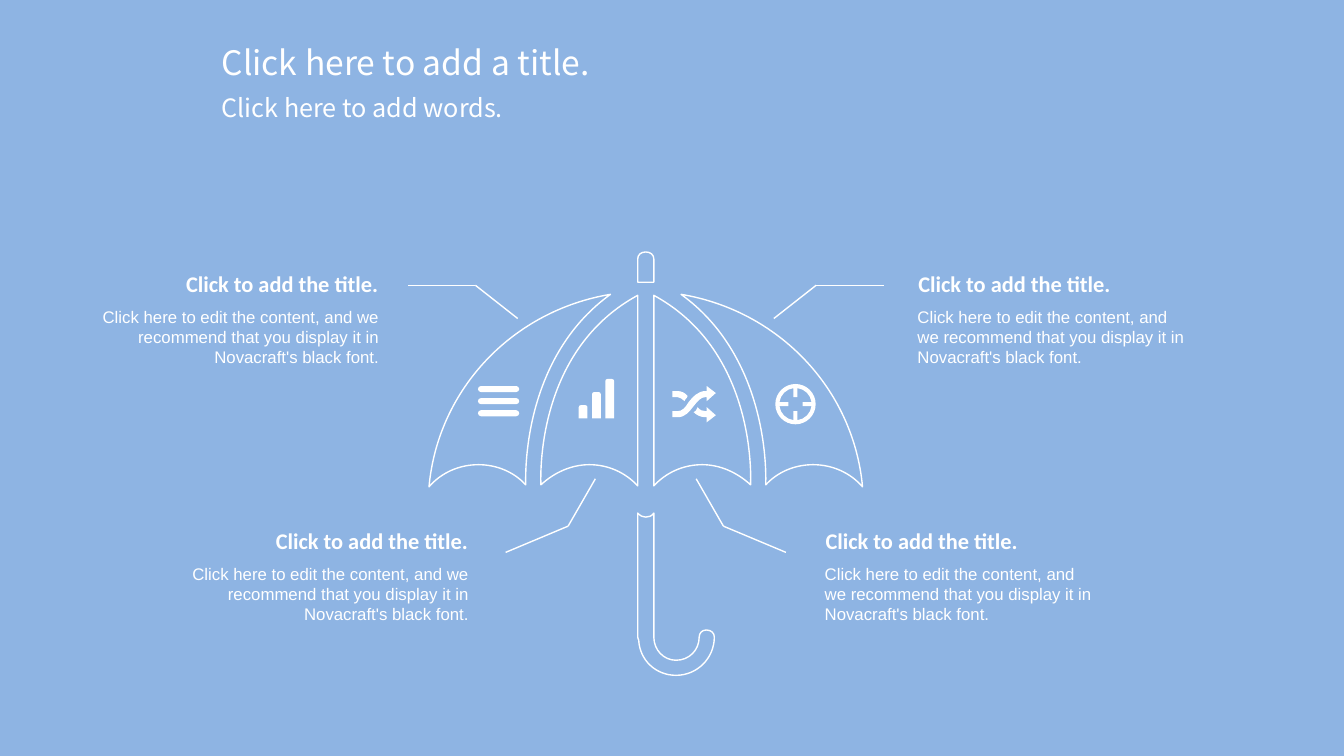
from dataclasses import dataclass
from math import asin, ceil, cos, pi, sin, tan

from lxml.etree import SubElement
from pptx import Presentation
from pptx.dml.color import RGBColor
from pptx.enum.shapes import MSO_CONNECTOR as Connector
from pptx.enum.text import MSO_ANCHOR as Anchor, MSO_AUTO_SIZE as AutoSize, PP_ALIGN as Align
from pptx.oxml.ns import qn
from pptx.util import Inches, Pt

CELL = Inches(7.5) / 75  # grid of 75 rows; every length below counts cells


@dataclass(frozen=True)
class Theme:
    sky: RGBColor = RGBColor(0x8E, 0xB4, 0xE3)
    white: RGBColor = RGBColor(0xFF, 0xFF, 0xFF)
    line: float = 1
    heading: tuple = ("Noto Sans CJK SC", 24, False)
    subheading: tuple = ("Noto Sans CJK SC", 18, False)
    caption: tuple = ("Calibri", 16, True)
    body: tuple = ("Arial", 12, False)


@dataclass(frozen=True)
class Box:
    left: float
    top: float
    width: float
    height: float


THEME = Theme()
CAPTION = "Click to add the title."
BODY = ("Click here to edit the content, and we recommend that you "
        "display it in Novacraft's black font.")

# Umbrella outlines, measured from the axis and the tip.
# Two numbers are a line's end, six are a Bezier curve's controls and end.
OUTER_PANEL = [
    (16.6, 21.1), (14.8, 21.1, 13.1, 21.8, 11.9, 23.1), (12, 20, 11.4, 9.9, 3.5, 4.2),
    (13.1, 5.8, 20.6, 13.5, 21.5, 23.3), (20.3, 21.9, 18.5, 21.1, 16.6, 21.1)]
INNER_PANEL = [
    (5.6, 21.1), (3.7, 21.1, 2, 21.9, 0.8, 23.2), (0.8, 4.3),
    (10, 9.3, 10.5, 20.1, 10.4, 23.1), (9.1, 21.9, 7.4, 21.1, 5.6, 21.1)]
HANDLE = [
    (0, 26.3), (-0.3, 26.3, -0.5, 26.2, -0.8, 25.9), (-0.8, 38.2),
    (-0.8, 38.3, -0.7, 38.5, -0.7, 38.5), (-0.6, 40.5, 1, 42, 3, 42),
    (5.1, 42, 6.8, 40.3, 6.8, 38.2), (6.8, 37.8, 6.5, 37.5, 6, 37.5),
    (5.6, 37.5, 5.3, 37.8, 5.3, 38.2), (5.3, 39.5, 4.3, 40.5, 3, 40.5),
    (1.8, 40.5, 0.8, 39.5, 0.8, 38.2), (0.8, 25.9), (0.6, 26.2, 0.3, 26.3, 0, 26.3)]
TIP = [(0.8, 3), (0.8, 0.7), (0.8, 0.3, 0.5, 0, 0, 0),
       (-0.5, 0, -0.8, 0.3, -0.8, 0.7), (-0.8, 3)]
UPPER_LEADER = [(12.7, 6.6), (16.9, 3.3), (23.6, 3.3)]
LOWER_LEADER = [(5, 22.5), (7.7, 27.2), (13.9, 29.8)]

SHUFFLE = [
    [(3.4, 2.5), (3.3, 2.5), (3, 2.5, 2.7, 2.4, 2.5, 2.1), (2.4, 2.4, 2.3, 2.5, 2.1, 2.6),
     (2.4, 2.9, 2.8, 3.1, 3.3, 3.1), (3.4, 3.1), (3.4, 3.6), (4.3, 2.9), (3.4, 2.1)],
    [(1.2, 1.5), (1.2, 1.4, 1.2, 1.4, 1.3, 1.3), (1.4, 1.2, 1.5, 1.1, 1.5, 1),
     (1.3, 0.7, 0.9, 0.5, 0.5, 0.5), (0, 0.5), (0, 1.1), (0.5, 1.1),
     (0.7, 1.1, 1, 1.3, 1.2, 1.5)],
    [(3.3, 1.1), (3.4, 1.1), (3.4, 1.5), (4.3, 0.7), (3.4, 0), (3.4, 0.5), (3.3, 0.5),
     (2.5, 0.5, 2, 1.1, 1.6, 1.6), (1.3, 2.1, 1, 2.5, 0.5, 2.5), (0, 2.5), (0, 3.1),
     (0.5, 3.1), (1.3, 3.1, 1.7, 2.5, 2.1, 2), (2.5, 1.5, 2.8, 1.1, 3.3, 1.1)]]


def arc(cx, cy, radius, start, end):
    """Return a start point and one curve for each quarter turn or less."""
    pieces = ceil((end - start) / (pi / 2) - 0.01)
    step = (end - start) / pieces
    reach = 4 / 3 * tan(step / 4)
    outline = [(cx + radius * cos(start), cy + radius * sin(start))]
    for piece in range(pieces):
        a, b = start + piece * step, start + (piece + 1) * step
        outline.append((cx + radius * (cos(a) - reach * sin(a)),
                        cy + radius * (sin(a) + reach * cos(a)),
                        cx + radius * (cos(b) + reach * sin(b)),
                        cy + radius * (sin(b) - reach * cos(b)),
                        cx + radius * cos(b), cy + radius * sin(b)))
    return outline


def draw_outlines(page, left, top, outlines, flip=1, filled=False):
    builder = None
    for outline in outlines:
        points = [((left + flip * x) * CELL, (top + y) * CELL)
                  for segment in outline for x, y in zip(segment[::2], segment[1::2])]
        if builder is None:
            builder = page.shapes.build_freeform(*points[0], scale=1.0)
        else:
            builder.move_to(*points[0])
        builder.add_line_segments(points[1:], close=True)
    shape = builder.convert_to_shape()

    # Join each curve's three points into one Bezier segment
    lines = iter(list(shape._element.iter(qn("a:lnTo"))))
    for outline in outlines:
        for segment in outline[1:]:
            first = next(lines)
            if len(segment) == 6:
                first.tag = qn("a:cubicBezTo")
                for _ in range(2):
                    extra = next(lines)
                    first.append(extra[0])
                    extra.getparent().remove(extra)

    shape.shadow.inherit = False
    if filled:
        shape.fill.solid()
        shape.fill.fore_color.rgb = THEME.white
        shape.line.fill.background()
    else:
        shape.fill.background()
        shape.line.color.rgb = THEME.white
        shape.line.width = Pt(THEME.line)


def add_text(page, box, text, style, align=Align.LEFT, inset=None, grow=True):
    area = page.shapes.add_textbox(*(round(v * CELL) for v in
                                     (box.left, box.top, box.width, box.height)))
    frame = area.text_frame
    frame.word_wrap = True
    if grow:
        frame.auto_size = AutoSize.SHAPE_TO_FIT_TEXT
    else:
        frame.vertical_anchor = Anchor.MIDDLE
    if inset is not None:
        frame.margin_left = frame.margin_right = inset
        frame.margin_top = frame.margin_bottom = inset
    para = frame.paragraphs[0]
    para.alignment = align
    span = para.add_run()
    span.text = text
    span.font.name, size, span.font.bold = style
    span.font.size = Pt(size)
    span.font.color.rgb = THEME.white


def add_leader(page, axis, top, points, flip):
    group = page.shapes.add_group_shape()
    corners = [(round((axis + flip * x) * CELL), round((top + y) * CELL)) for x, y in points]
    for start, end in zip(corners, corners[1:]):
        line = group.shapes.add_connector(Connector.STRAIGHT, *start, *end)
        line.line.color.rgb = THEME.white
        line.line.width = Pt(THEME.line)
        SubElement(line._element.spPr, qn("a:effectLst"))


def add_header(page, box):
    add_text(page, Box(box.left, box.top, box.width, 5),
             "Click here to add a title.", THEME.heading, Align.JUSTIFY)
    add_text(page, Box(box.left, box.top + 5, box.width, 4),
             "Click here to add words.", THEME.subheading)


def add_umbrella(page, box):
    axis = box.left + box.width / 2
    for leader in (UPPER_LEADER, LOWER_LEADER):
        for flip in (1, -1):
            add_leader(page, axis, box.top, leader, flip)
    for panel in (OUTER_PANEL, INNER_PANEL):
        for flip in (-1, 1):
            draw_outlines(page, axis, box.top, [panel], flip)
    for part in (HANDLE, TIP):
        draw_outlines(page, axis, box.top, [part])


def add_icons(page, box):
    # Menu: three pills
    radius = 0.3
    pills = [arc(3.8, y, radius, -pi / 2, pi / 2) + arc(radius, y, radius, pi / 2, 3 * pi / 2)
             for y in (0.3, 1.5, 2.7)]
    draw_outlines(page, box.left + 4.9, box.top + 13.3, pills, filled=True)

    # Rising bars with rounded tops
    width, pitch, rise, corner = 0.87, 1.32, 1.3, 0.2
    bars = []
    for index in range(3):
        left, top = index * pitch, (2 - index) * rise
        bars.append([(left, 3 * rise)]
                    + arc(left + corner, top + corner, corner, pi, 3 * pi / 2)
                    + arc(left + width - corner, top + corner, corner, -pi / 2, 0)
                    + [(left + width, 3 * rise)])
    draw_outlines(page, box.left + 14.9, box.top + 12.6, bars, filled=True)

    # Crossing arrows
    draw_outlines(page, box.left + 24.2, box.top + 13.3, SHUFFLE, filled=True)

    # Crosshair: ring with four ticks
    hole, half_tick, tick_end = 1.6, 0.2, 0.7
    trim = asin(half_tick / hole)
    inside = []
    for quarter in range(4):
        turn = quarter * pi / 2
        inside += arc(0, 0, hole, turn + trim, turn + pi / 2 - trim)
        for side in (half_tick, -half_tick):
            inside.append((side * cos(turn) - tick_end * sin(turn),
                           side * sin(turn) + tick_end * cos(turn)))
    draw_outlines(page, box.left + 36.4, box.top + 15.1,
                  [arc(0, 0, 2, 0, 2 * pi), inside], filled=True)


def add_caption(page, edge, top, align):
    """Set a caption and its body against one text edge."""
    right = align == Align.RIGHT
    title_left = edge + 0.9 - 22 if right else edge - 0.9
    width = 27.5 if right else 27.3
    body_left = edge - width if right else edge
    add_text(page, Box(title_left, top, 22, 2.9), CAPTION, THEME.caption, align, grow=False)
    add_text(page, Box(body_left, top + 3.7, width, 4), BODY, THEME.body, align, inset=0)


def build_umbrella_page(deck):
    page = deck.slides.add_slide(deck.slide_layouts[6])
    page.background.fill.solid()
    page.background.fill.fore_color.rgb = THEME.sky
    umbrella = Box(42.5, 25, 43.1, 42)
    add_header(page, Box(21, 3.7, 39.7, 9))
    add_umbrella(page, umbrella)
    add_icons(page, umbrella)
    for top, right_edge, left_edge in ((26.7, 91, 37.6), (52.2, 81.8, 46.5)):
        add_caption(page, right_edge, top, Align.LEFT)
        add_caption(page, left_edge, top, Align.RIGHT)


def main():
    deck = Presentation()
    deck.slide_width, deck.slide_height = Inches(13.33), Inches(7.5)
    build_umbrella_page(deck)
    deck.save("out.pptx")


if __name__ == "__main__":
    main()
